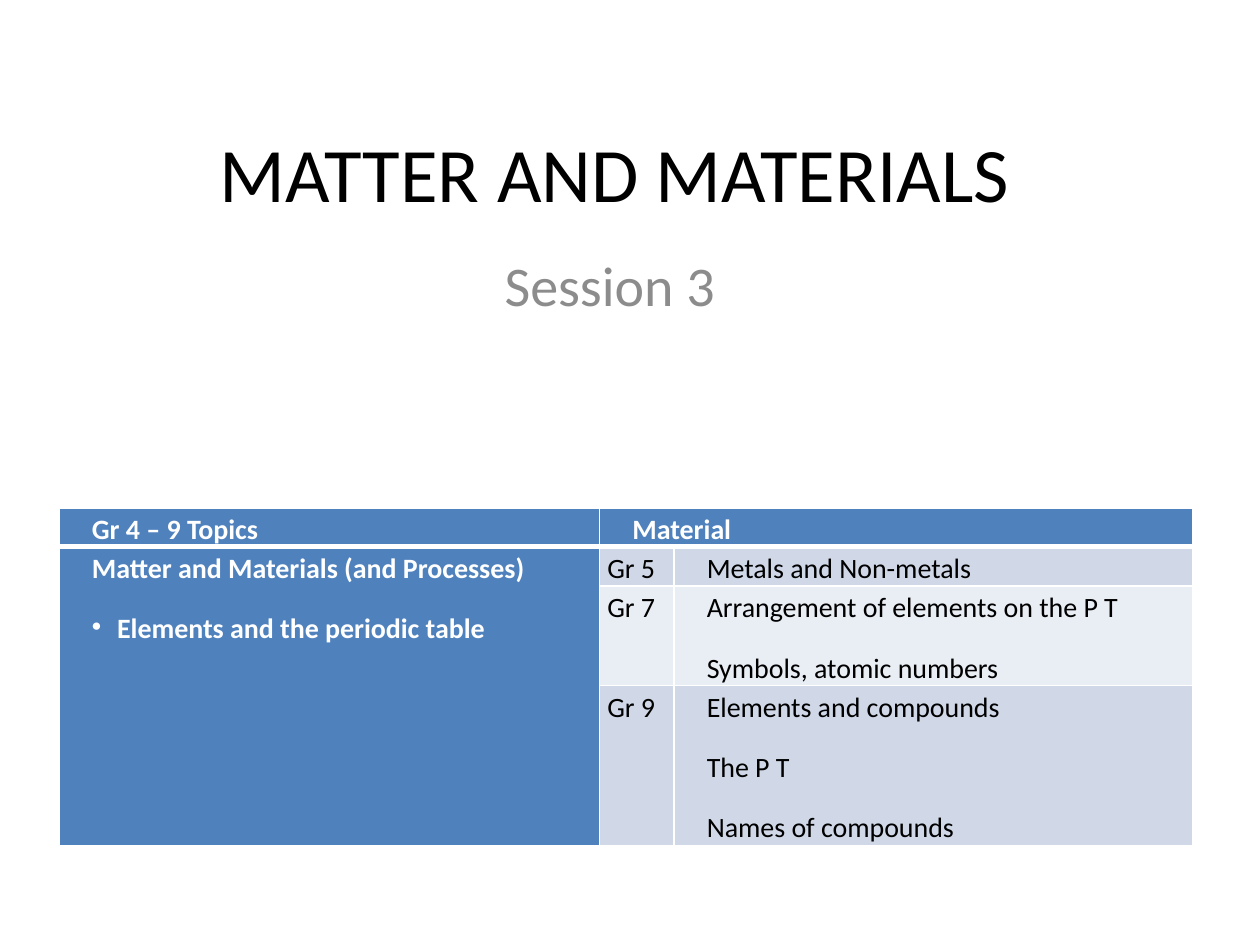
from dataclasses import dataclass

import pptx
import pptx.dml.color
import pptx.enum.text
import pptx.oxml
import pptx.oxml.ns
import pptx.util
from pptx.util import Inches


@dataclass(frozen=True)
class Theme:
    font: str = "Calibri"
    title_size: int = 44
    subtitle_size: int = 32
    table_size: int = 16
    black: str = "000000"
    grey: str = "8C8C8C"
    white: str = "FFFFFF"
    header: str = "4F81BD"
    band_dark: str = "D0D8E8"
    band_light: str = "E9EDF4"


@dataclass(frozen=True)
class Heading:
    text: str
    box: tuple[float, float, float, float]
    size: int
    color: str
    anchor: pptx.enum.text.MSO_ANCHOR
    space_before: float = 0


@dataclass(frozen=True)
class Entry:
    row: int
    column: int
    lines: tuple[str, ...]
    fill: str
    color: str = Theme.black
    bold: bool = False
    margin: float = 0.2
    hanging: float = 0
    bulleted_from: int = 99


THEME = Theme()
COLUMN_WIDTHS = (4.29, 0.59, 4.12)
ROW_HEIGHTS = (0.31, 0.31, 0.79, 1.27)

HEADINGS = (
    Heading("MATTER AND MATERIALS", (0.63, 0.56, 8.5, 1.61), THEME.title_size,
            THEME.black, pptx.enum.text.MSO_ANCHOR.MIDDLE),
    Heading("Session 3", (1.34, 1.94, 7, 1.92), THEME.subtitle_size,
            THEME.grey, pptx.enum.text.MSO_ANCHOR.TOP, 6.4),
)

GRADES = (
    ("Gr 5", ("Metals and Non-metals",), THEME.band_dark),
    ("Gr 7", ("Arrangement of elements on the P T", "Symbols, atomic numbers"),
     THEME.band_light),
    ("Gr 9", ("Elements and compounds", "The P T", "Names of compounds"),
     THEME.band_dark),
)


def rgb(color: str) -> pptx.dml.color.RGBColor:
    return pptx.dml.color.RGBColor.from_string(color)


def style_font(paragraph, size: int, color: str, bold: bool = False) -> None:
    font = paragraph.font
    font.name, font.size, font.bold = THEME.font, pptx.util.Pt(size), bold
    font.color.rgb = rgb(color)


def add_heading(slide, heading: Heading) -> None:
    frame = slide.shapes.add_textbox(*map(Inches, heading.box)).text_frame
    frame.word_wrap = True
    frame.vertical_anchor = heading.anchor
    paragraph = frame.paragraphs[0]
    paragraph.text = heading.text
    paragraph.alignment = pptx.enum.text.PP_ALIGN.CENTER
    paragraph.space_before = pptx.util.Pt(heading.space_before)
    style_font(paragraph, heading.size, heading.color)


def set_borders(cell, thick_sides: str) -> None:
    properties = cell._tc.get_or_add_tcPr()
    for position, side in enumerate("LRTB"):
        width = pptx.util.Pt(3 if side in thick_sides else 1)
        properties.insert(position, pptx.oxml.parse_xml(
            f'<a:ln{side} {pptx.oxml.ns.nsdecls("a")} w="{width}"><a:solidFill>'
            f'<a:srgbClr val="{THEME.white}"/></a:solidFill></a:ln{side}>'))


def fill_entry(table, entry: Entry) -> None:
    cell = table.cell(entry.row, entry.column)
    cell.fill.solid()
    cell.fill.fore_color.rgb = rgb(entry.fill)
    cell.margin_left = cell.margin_right = Inches(0.06)
    cell.margin_top = cell.margin_bottom = 0
    for number, line in enumerate(entry.lines):
        frame = cell.text_frame
        paragraph = frame.add_paragraph() if number else frame.paragraphs[0]
        paragraph.text = line
        paragraph.line_spacing = 1.15
        paragraph.space_before = paragraph.space_after = pptx.util.Pt(6)
        properties = paragraph._p.get_or_add_pPr()
        properties.set("marL", str(Inches(entry.margin)))
        properties.set("indent", str(Inches(entry.hanging)))
        if number >= entry.bulleted_from:
            properties.append(pptx.oxml.parse_xml(
                f'<a:buChar {pptx.oxml.ns.nsdecls("a")} char="•"/>'))
        style_font(paragraph, THEME.table_size, entry.color, entry.bold)


def add_topics_table(slide, entries: list[Entry]) -> None:
    table = slide.shapes.add_table(
        len(ROW_HEIGHTS), len(COLUMN_WIDTHS), Inches(0.47), Inches(4.03),
        Inches(sum(COLUMN_WIDTHS)), Inches(sum(ROW_HEIGHTS))).table
    table.first_row = table.horz_banding = False
    for column, width in zip(table.columns, COLUMN_WIDTHS):
        column.width = Inches(width)
    for row, height in zip(table.rows, ROW_HEIGHTS):
        row.height = Inches(height)

    # Header over both material columns, topic beside all grades
    table.cell(0, 1).merge(table.cell(0, 2))
    table.cell(1, 0).merge(table.cell(3, 0))
    for entry in entries:
        fill_entry(table, entry)
    for number, row in enumerate(table.rows):
        for cell in row.cells:
            set_borders(cell, {0: "B", 1: "T"}.get(number, ""))


def main() -> None:
    deck = pptx.Presentation()
    deck.slide_width, deck.slide_height = Inches(10), Inches(7.5)
    slide = deck.slides.add_slide(deck.slide_layouts[6])

    # Title and session
    for heading in HEADINGS:
        add_heading(slide, heading)

    # Topics by grade
    entries = [
        Entry(0, column, (text,), THEME.header, THEME.white, True)
        for column, text in enumerate(("Gr 4 – 9 Topics", "Material"))
    ]
    entries.append(Entry(
        1, 0, ("Matter and Materials (and Processes)",
               "Elements and the periodic table"),
        THEME.header, THEME.white, True, 0.4, -0.2, bulleted_from=1))
    for row, (grade, topics, band) in enumerate(GRADES, start=1):
        entries.append(Entry(row, 1, (grade,), band, margin=0))
        entries.append(Entry(row, 2, topics, band))
    add_topics_table(slide, entries)

    deck.save("out.pptx")


if __name__ == "__main__":
    main()
